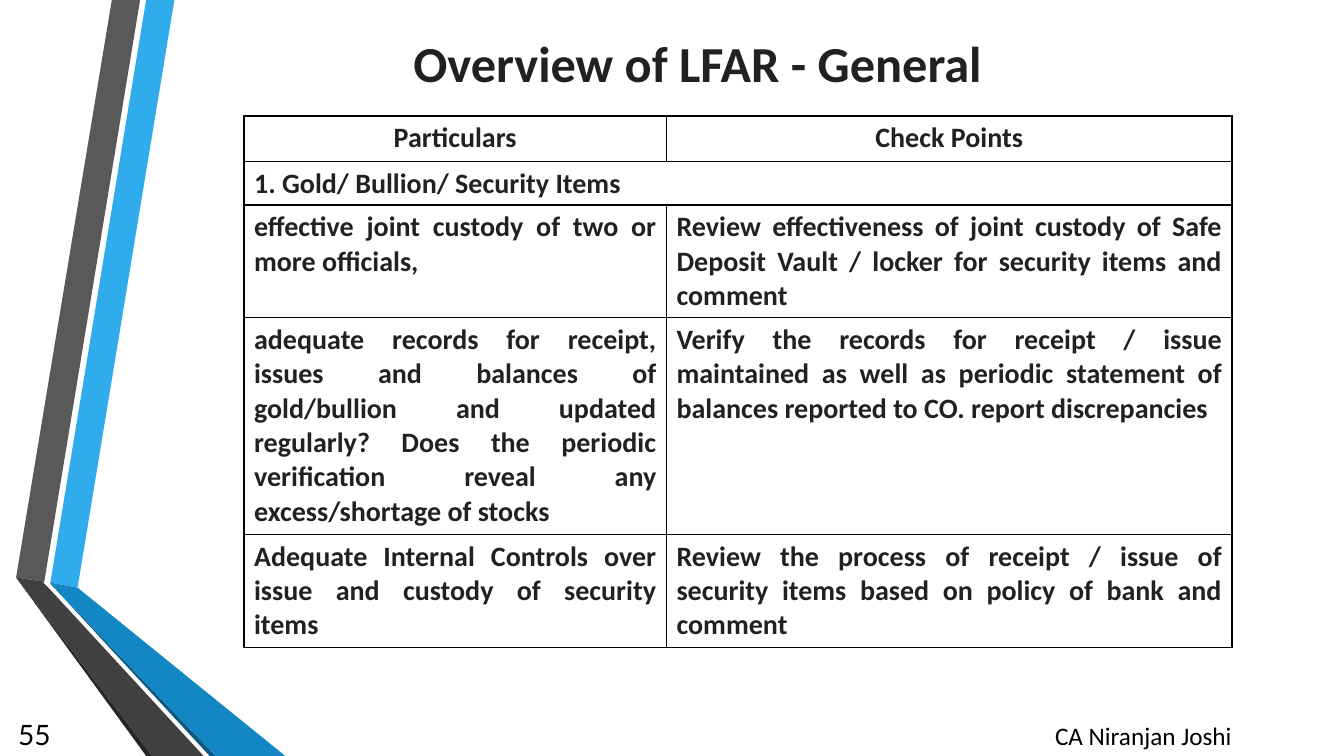
from lxml import etree
from pptx import Presentation
from pptx import util as u
from pptx.dml.color import RGBColor
from pptx.enum import text
from pptx.oxml import ns

PX = 9144
C = {"sky": "30ACEC", "blue": "1287C3", "navy": "0C5A82", "grey": "595959",
     "dark": "404040", "shade": "262626", "ink": "212121", "black": "000000"}
AL = text.PP_ALIGN
MID = text.MSO_ANCHOR.MIDDLE


def write(tf, words, size, align, font="Calibri", color="ink", bold=False,
          anchor=text.MSO_ANCHOR.TOP):
    tf.word_wrap = True
    tf.vertical_anchor = anchor
    p = tf.paragraphs[0]
    p.alignment = align
    r = p.add_run()
    r.text = words
    r.font.size = u.Pt(size)
    r.font.name = font
    r.font.bold = bold
    r.font.color.rgb = RGBColor.from_string(C[color])


prs = Presentation()
prs.slide_width, prs.slide_height = 1333 * PX, 750 * PX
s = prs.slides.add_slide(prs.slide_layouts[6])

ribbons = [
    ("sky", [(50, 578), (77, 583), (173, 0), (145, 0)]),
    ("grey", [(139, 0), (111, 0), (16, 573), (44, 577)]),
    ("shade", [(16, 573), (145, 750), (151, 750)]),
    ("navy", [(50, 579), (208, 750), (214, 750)]),
    ("blue", [(50, 579), (214, 750), (283, 750), (77, 583), (50, 578)]),
    ("dark", [(202, 750), (48, 583), (43, 578), (44, 577), (16, 573), (151, 750)]),
]
for color, pts in ribbons:
    fb = s.shapes.build_freeform(*pts[0], scale=PX)
    fb.add_line_segments(pts[1:], close=True)
    sp = fb.convert_to_shape()
    sp.shadow.inherit = False
    sp.fill.solid()
    sp.fill.fore_color.rgb = RGBColor.from_string(C[color])
    sp.line.fill.background()

labels = [
    ((242, 25, 900, 74), "Overview of LFAR - General", 36, AL.CENTER,
     dict(bold=True, anchor=MID)),
    ((959, 710, 350, 40), "CA Niranjan Joshi", 18, AL.CENTER, dict(color="black")),
    ((0, 708, 60, 40), "55", 20, AL.RIGHT,
     dict(font="Lato", color="black", anchor=MID)),
]
for box, words, size, align, fmt in labels:
    sp = s.shapes.add_textbox(*[v * PX for v in box])
    write(sp.text_frame, words, size, align, **fmt)

rows = [
    (45, ["Particulars", "Check Points"]),
    (43, ["1. Gold/ Bullion/ Security Items"]),
    (112, ["effective joint custody of two or more officials,",
           "Review effectiveness of joint custody of Safe Deposit Vault / locker "
           "for security items and comment"]),
    (215, ["adequate records for receipt, issues and balances of gold/bullion and "
           "updated regularly? Does the periodic verification reveal any "
           "excess/shortage of stocks",
           "Verify the records for receipt / issue maintained as well as periodic "
           "statement of balances reported to CO. report discrepancies"]),
    (112, ["Adequate Internal Controls over issue and custody of security items",
           "Review the process of receipt / issue of security items based on "
           "policy of bank and comment"]),
]
cols = [419, 561]
height = sum(h for h, _ in rows)
tbl = s.shapes.add_table(len(rows), len(cols), 242 * PX, 115 * PX,
                         sum(cols) * PX, height * PX).table
tbl.first_row = tbl.horz_banding = False
for j, w in enumerate(cols):
    tbl.columns[j].width = w * PX
for i, (h, words) in enumerate(rows):
    tbl.rows[i].height = h * PX
    if len(words) == 1:
        tbl.cell(i, 0).merge(tbl.cell(i, 1))
    for j in range(len(cols)):
        cell = tbl.cell(i, j)
        tcPr = cell._tc.get_or_add_tcPr()
        for side in ("lnL", "lnR", "lnT", "lnB"):
            ln = etree.SubElement(tcPr, ns.qn("a:" + side), w=str(u.Pt(1)))
            fill = etree.SubElement(ln, ns.qn("a:solidFill"))
            etree.SubElement(fill, ns.qn("a:srgbClr"), val=C["black"])
        cell.fill.background()
        if j < len(words):
            write(cell.text_frame, words[j], 20, AL.JUSTIFY if i else AL.CENTER, bold=True)

prs.save("out.pptx")
